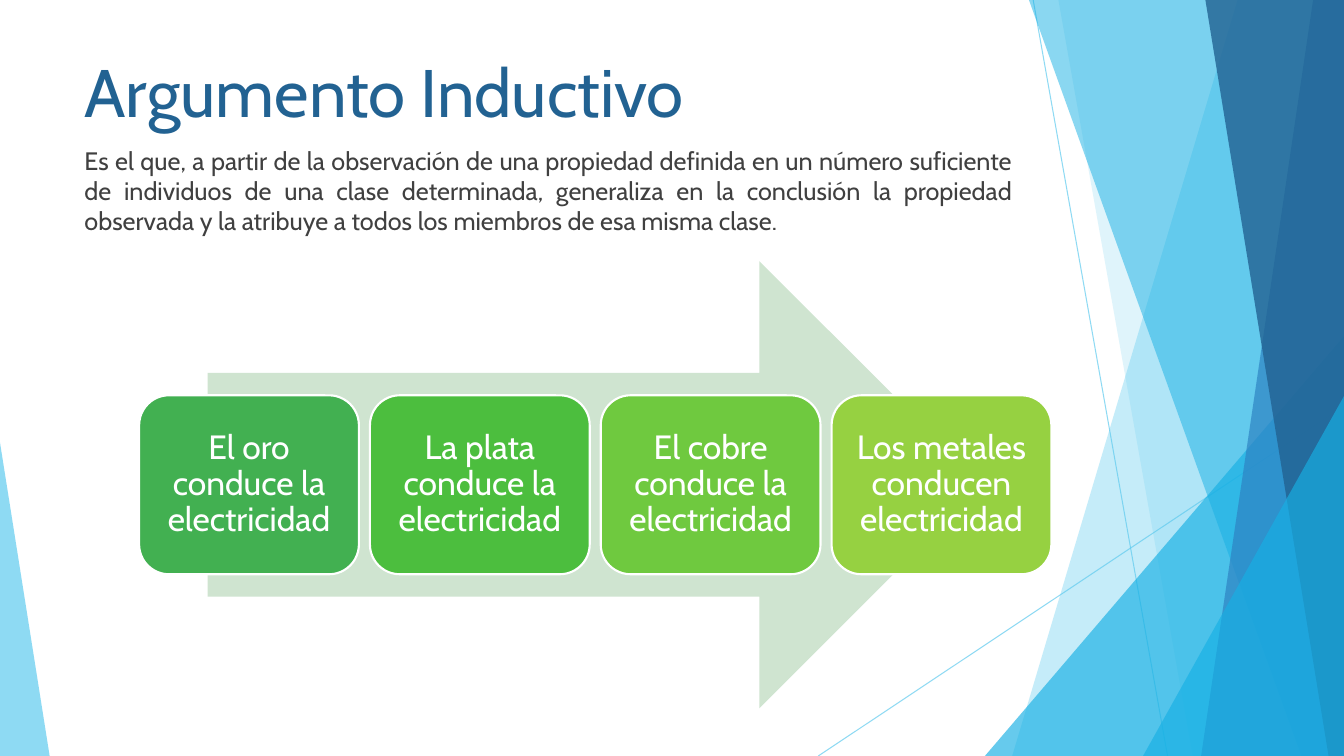
from dataclasses import dataclass

from lxml import etree
from pptx import Presentation
from pptx.dml.color import RGBColor
from pptx.enum.shapes import MSO_CONNECTOR, MSO_SHAPE
from pptx.enum.text import MSO_ANCHOR, PP_ALIGN
from pptx.oxml.ns import qn
from pptx.util import Pt

STRAIGHT = MSO_CONNECTOR.STRAIGHT
TRIANGLE = MSO_SHAPE.ISOSCELES_TRIANGLE
ARROW = MSO_SHAPE.RIGHT_ARROW
CARD = MSO_SHAPE.ROUNDED_RECTANGLE
TOP, MIDDLE = MSO_ANCHOR.TOP, MSO_ANCHOR.MIDDLE
LEFT, CENTER, JUSTIFY = PP_ALIGN.LEFT, PP_ALIGN.CENTER, PP_ALIGN.JUSTIFY


@dataclass(frozen=True)
class Theme:
    """Colours, font and type sizes of the slide."""
    font: str = "Cabin"
    title_size: float = 48
    body_size: float = 18
    card_size: float = 24
    title: str = "226292"
    body: str = "404040"
    white: str = "FFFFFF"
    sky: str = "5FCBEF"
    cyan: str = "17B0E4"
    blue: str = "2E83C3"
    navy: str = "226292"
    arrow: str = "CFE4D0"
    cards: tuple = ("42B051", "4CBE3E", "6FC93F", "96D141")


THEME = Theme()
STATEMENTS = (
    "El oro conduce la electricidad",
    "La plata conduce la electricidad",
    "El cobre conduce la electricidad",
    "Los metales conducen electricidad",
)
DEFINITION = (
    "Es el que, a partir de la observación de una propiedad definida en un "
    "número suficiente de individuos de una clase determinada, generaliza en "
    "la conclusión la propiedad observada y la atribuye a todos los miembros "
    "de esa misma clase."
)


def set_alpha(fill, percent):
    """Make a solid fill partly transparent."""
    color = fill._xPr.find(qn("a:solidFill"))[0]
    etree.SubElement(color, qn("a:alpha")).set("val", str(percent * 1000))


def paint(sp, color, alpha=100):
    """Give a shape a flat fill with no outline or shadow."""
    sp.shadow.inherit = False
    sp.fill.solid()
    sp.fill.fore_color.rgb = RGBColor.from_string(color)
    if alpha < 100:
        set_alpha(sp.fill, alpha)
    sp.line.fill.background()


def add_preset(s, kind, box, color, alpha=100):
    """Add a painted preset shape in the given box."""
    sp = s.shapes.add_shape(kind, *map(Pt, box))
    paint(sp, color, alpha)
    return sp


def write(sp, text, *, size, color, align=LEFT, anchor=TOP, inset=(7.2, 3.6),
          spacing=1.0):
    """Write one formatted paragraph into a shape."""
    tf = sp.text_frame
    tf.word_wrap = True
    tf.vertical_anchor = anchor
    tf.margin_left = tf.margin_right = Pt(inset[0])
    tf.margin_top = tf.margin_bottom = Pt(inset[1])
    p = tf.paragraphs[0]
    p.alignment, p.line_spacing = align, spacing
    r = p.add_run()
    r.text = text
    r.font.name, r.font.size = THEME.font, Pt(size)
    r.font.color.rgb = RGBColor.from_string(color)


def add_hairline(s, start, end):
    """Add a thin translucent line between two points."""
    cn = s.shapes.add_connector(STRAIGHT, *map(Pt, start + end))
    cn.line.width = Pt(0.75)
    cn.line.fill.solid()
    cn.line.color.rgb = RGBColor.from_string(THEME.sky)
    set_alpha(cn.line.fill, 70)
    etree.SubElement(cn._element.spPr, qn("a:effectLst"))


def add_facets(s, box):
    """Draw the translucent facets along both sides of the box."""
    x, y, w, h = box
    right, bottom = x + w, y + h

    def band(top_width, bottom_width, color, alpha):
        """Add a facet running from a slanted edge to the right side."""
        fb = s.shapes.build_freeform(Pt(right - top_width), Pt(y))
        fb.add_line_segments([(Pt(right), Pt(y)), (Pt(right), Pt(bottom)),
                              (Pt(right - bottom_width), Pt(bottom))])
        paint(fb.convert_to_shape(), color, alpha)

    def wedge(left, width, height, apex, color, alpha):
        """Add a right triangle standing on the bottom side."""
        sp = add_preset(s, TRIANGLE, (left, bottom - height, width, height), color, alpha)
        sp.adjustments[0] = apex

    add_hairline(s, (right - 222, y), (right - 126, bottom))
    add_hairline(s, (right, y + 290), (right - 375.5, bottom))
    band(76, 237, THEME.sky, 36)
    band(204, 108, THEME.sky, 20)
    wedge(right - 256.5, 256.5, 300, 1, THEME.cyan, 66)
    band(225, 30.5, THEME.cyan, 50)
    band(22, 102, THEME.blue, 70)
    band(99, 11, THEME.navy, 80)
    wedge(right - 143.5, 143.5, 257, 1, THEME.cyan, 66)
    wedge(x, 35.5, 224, 0, THEME.sky, 70)


def add_heading(s, box):
    """Write the title with the definition below it."""
    x, y, w, h = box
    title = s.shapes.add_textbox(*map(Pt, (x, y, w, 67.5)))
    write(title, "Argumento Inductivo", size=THEME.title_size, color=THEME.title)
    body = s.shapes.add_textbox(*map(Pt, (x, y + 67.5, w, h - 67.5)))
    write(body, DEFINITION, size=THEME.body_size, color=THEME.body, align=JUSTIFY)


def add_process(s, box):
    """Draw the statement cards in a row over a wide arrow."""
    x, y, w, h = box
    gap, card_h = 7.9, 0.4 * h
    card_w = (w - gap * (len(STATEMENTS) - 1)) / len(STATEMENTS)
    arrow_w = 0.85 * w
    add_preset(s, ARROW, (x + (w - arrow_w) / 2, y, arrow_w, h), THEME.arrow)
    for i, (text, color) in enumerate(zip(STATEMENTS, THEME.cards)):
        left = x + i * (card_w + gap)
        sp = add_preset(s, CARD, (left, y + (h - card_h) / 2, card_w, card_h), color)
        sp.line.color.rgb = RGBColor.from_string(THEME.white)
        sp.line.width = Pt(1.5)
        write(sp, text, size=THEME.card_size, color=THEME.white, align=CENTER,
              anchor=MIDDLE, inset=(7.2, 7.2), spacing=0.9)


def main():
    """Build and save the slide."""
    prs = Presentation()
    prs.slide_width, prs.slide_height = Pt(960), Pt(540)
    s = prs.slides.add_slide(prs.slide_layouts[6])
    add_facets(s, (0, 0, 960, 540))
    add_heading(s, (53.3, 32.5, 676.8, 145))
    add_process(s, (99.4, 186.5, 651.6, 319.5))
    prs.save("out.pptx")


if __name__ == "__main__":
    main()
